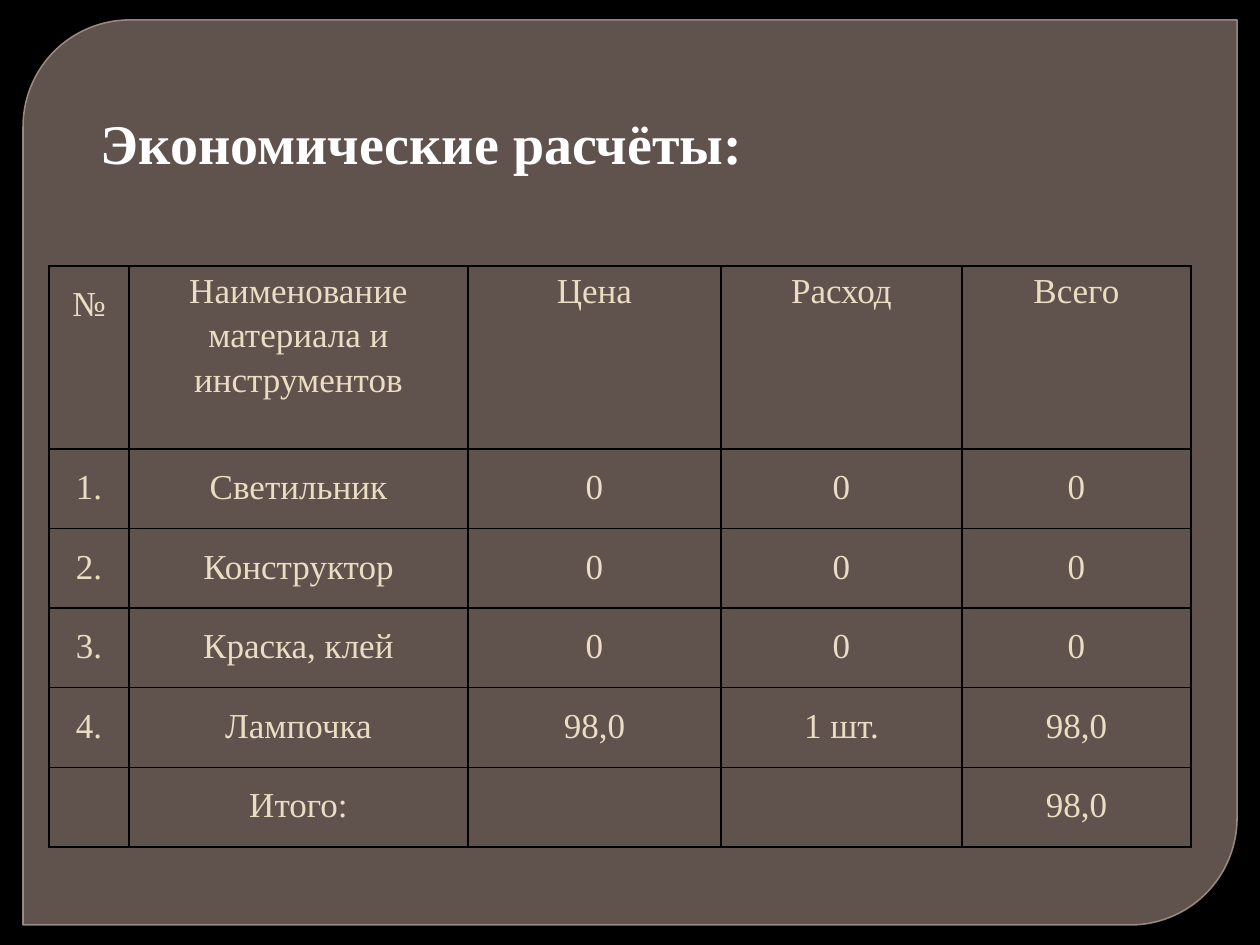
import pptx
import pptx.util
import pptx.oxml
import pptx.oxml.ns
import pptx.dml.color
import pptx.enum.shapes
import pptx.enum.text
from lxml import etree

# Content
TITLE = "Экономические расчёты:"
ROWS = [
    ["№", "Наименование материала и инструментов", "Цена", "Расход", "Всего"],
    ["1.", "Светильник", "0", "0", "0"],
    ["2.", "Конструктор", "0", "0", "0"],
    ["3.", "Краска, клей", "0", "0", "0"],
    ["4.", "Лампочка", "98,0", "1 шт.", "98,0"],
    ["", "Итого:", "", "", "98,0"],
]

# Layout in px, 126 to the inch
PANEL_BOX = (23, 20, 1214, 905)
TITLE_BOX = (88, 29, 1033, 285)
TABLE_LEFT, TABLE_TOP = 49, 266
COL_WIDTHS = [80, 339, 253, 241, 229]
HEADER_HEIGHT, BODY_HEIGHT = 183, 398
CELL_INSET = 9

FONT = "Times New Roman"
BLACK, WHITE, CREAM = "000000", "FFFFFF", "EBDDC3"
PANEL_FILL, PANEL_LINE = "948079", "A9948D"

qn = pptx.oxml.ns.qn


def px(n):
    return round(n * 914400 / 126)


def rgb(color):
    return pptx.dml.color.RGBColor.from_string(color)


def write(tf, text, size=20, color=CREAM, bold=False, align="CENTER", line=1.5, before=0, after=0):
    p = tf.paragraphs[0]
    p.alignment = getattr(pptx.enum.text.PP_ALIGN, align)
    p.line_spacing = line
    p.space_before = pptx.util.Pt(before)
    p.space_after = pptx.util.Pt(after)
    r = p.add_run()
    r.text = text
    r.font.name = FONT
    r.font.size = pptx.util.Pt(size)
    r.font.bold = bold
    r.font.color.rgb = rgb(color)


def set_alpha(props, percent):
    clr = props.find(".//" + qn("a:srgbClr"))
    etree.SubElement(clr, qn("a:alpha")).set("val", str(percent * 1000))


def add_borders(cell, color, width):
    tcPr = cell._tc.get_or_add_tcPr()
    for side in ("lnL", "lnR", "lnT", "lnB"):
        ln = etree.SubElement(tcPr, qn("a:" + side), w=str(pptx.util.Pt(width)))
        fill = etree.SubElement(ln, qn("a:solidFill"))
        etree.SubElement(fill, qn("a:srgbClr"), val=color)


prs = pptx.Presentation()
prs.slide_width, prs.slide_height = px(1260), px(945)
s = prs.slides.add_slide(prs.slide_layouts[5])
s.background.fill.solid()
s.background.fill.fore_color.rgb = rgb(BLACK)

# Title, raised above the middle of its box by the bottom inset
title = s.shapes.title
title.left, title.top, title.width, title.height = map(px, TITLE_BOX)
tf = title.text_frame
tf.word_wrap = True
tf.auto_size = pptx.enum.text.MSO_AUTO_SIZE.NONE
tf.vertical_anchor = pptx.enum.text.MSO_ANCHOR.MIDDLE
tf.margin_bottom = px(65)
write(tf, TITLE, size=32, color=WHITE, bold=True, align="LEFT", line=1.0)

# Background panel, placed behind the title
panel = s.shapes.add_shape(
    pptx.enum.shapes.MSO_SHAPE.ROUND_2_DIAG_RECTANGLE, *map(px, PANEL_BOX))
panel.adjustments[0], panel.adjustments[1] = 0.118, 0
panel.shadow.inherit = False
panel.fill.solid()
panel.fill.fore_color.rgb = rgb(PANEL_FILL)
panel.line.color.rgb = rgb(PANEL_LINE)
panel.line.width = pptx.util.Pt(0.87)
spPr = panel._element.spPr
set_alpha(spPr.find(qn("a:solidFill")), 65)
set_alpha(spPr.find(qn("a:ln")), 88)
title._element.addprevious(panel._element)

# Cost table
table = s.shapes.add_table(
    len(ROWS), len(COL_WIDTHS), px(TABLE_LEFT), px(TABLE_TOP),
    px(sum(COL_WIDTHS)), px(HEADER_HEIGHT + BODY_HEIGHT)).table
table.first_row = table.horz_banding = False
for col, width in zip(table.columns, COL_WIDTHS):
    col.width = px(width)
for i, row in enumerate(table.rows):
    row.height = px(BODY_HEIGHT / (len(ROWS) - 1)) if i else px(HEADER_HEIGHT)
    for j, text in enumerate(ROWS[i]):
        cell = table.cell(i, j)
        add_borders(cell, BLACK, 1)
        cell.fill.background()
        cell.margin_left = cell.margin_right = px(CELL_INSET)
        cell.margin_top = cell.margin_bottom = 0
        if text:
            is_heading = i == 0 and j > 0
            spacing = dict(line=1.15, after=6) if is_heading else dict(line=1.5, before=6)
            write(cell.text_frame, text, **spacing)

prs.save("out.pptx")
